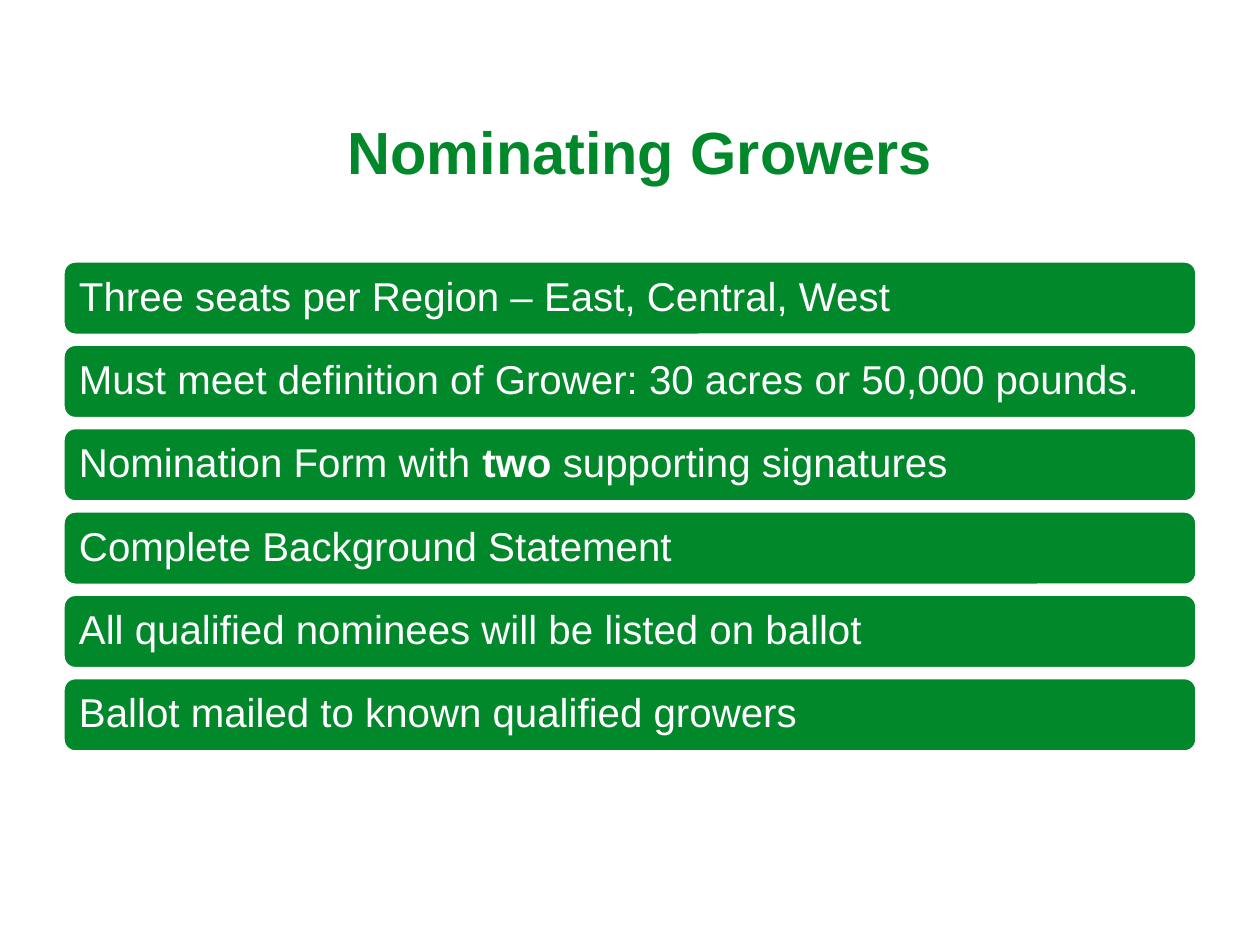
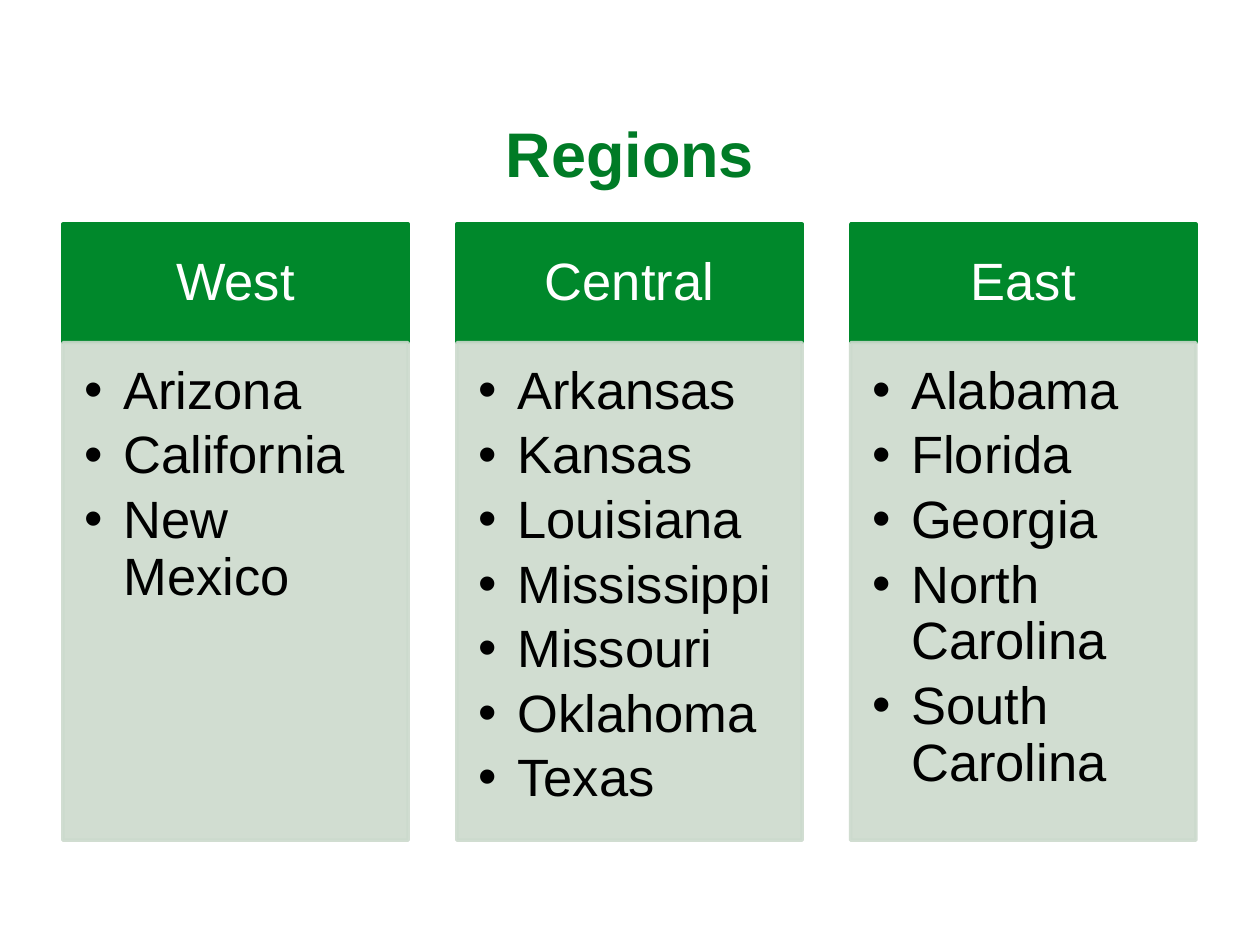
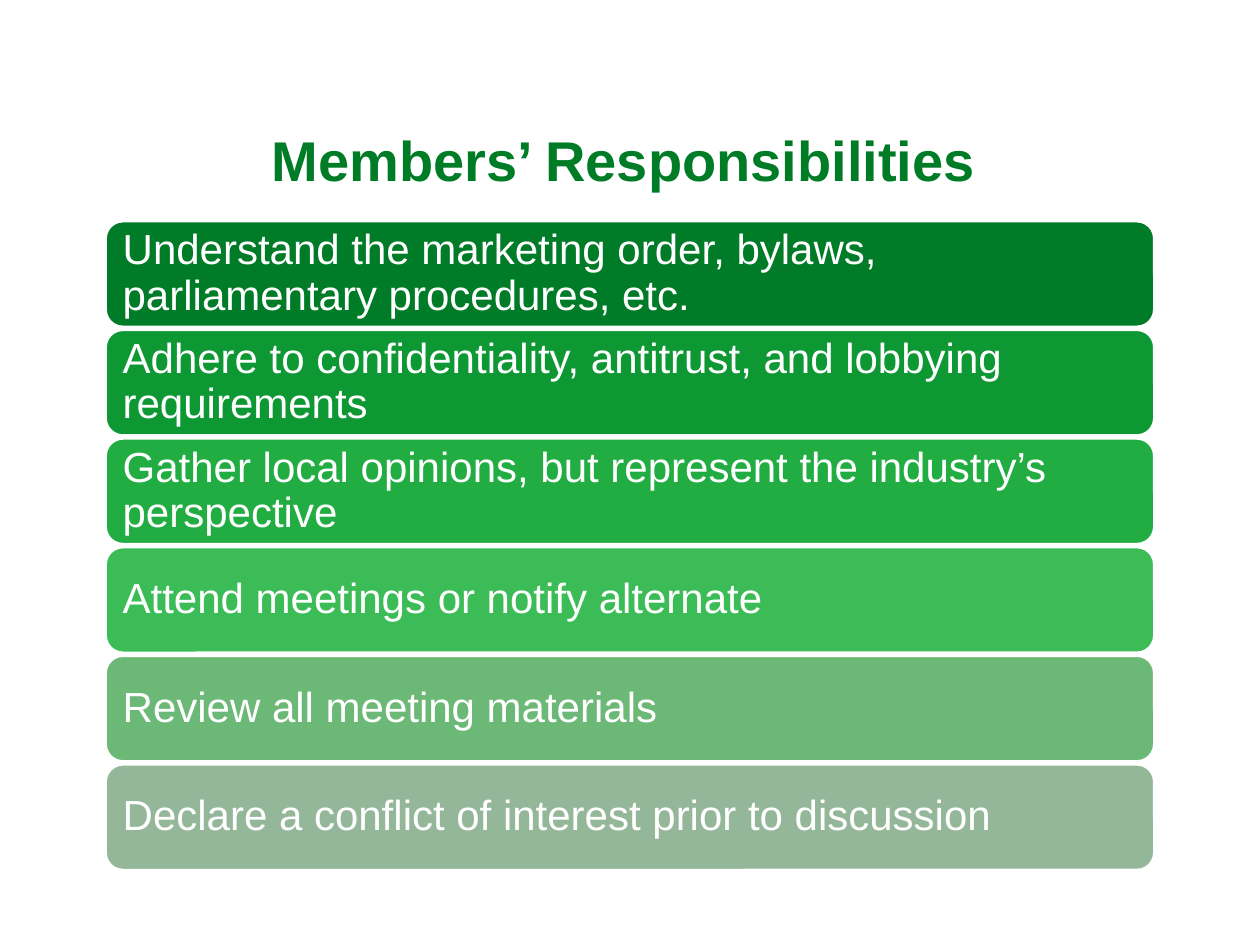
"""Build three slides on nominating growers, regions and members' duties."""
import dataclasses

import pptx
import pptx.dml.color
import pptx.enum.shapes
import pptx.enum.text
import pptx.oxml.ns
import pptx.util
from lxml import etree

Cm = pptx.util.Cm
Pt = pptx.util.Pt
ALIGN = pptx.enum.text.PP_ALIGN
ANCHOR = pptx.enum.text.MSO_ANCHOR
SHAPE = pptx.enum.shapes.MSO_SHAPE


@dataclasses.dataclass(frozen=True)
class Theme:
    font: str = "Arial"
    green: str = "00882B"
    dark_green: str = "007B26"
    pale_green: str = "CCDACD"
    white: str = "FFFFFF"
    black: str = "000000"
    fade: tuple = ("007B27", "0D9834", "22AD43", "3CBC56", "6BB877", "95B799")
    nomination_title: int = 34
    region_title: int = 36
    duty_title: int = 32
    nomination: int = 23
    region: int = 30
    duty: int = 24
    outline: int = 2
    opacity: int = 90
    line_spacing: float = 0.9
    state_gap: float = 4.5


class Deck:
    def __init__(self, theme):
        self.theme = theme
        self.presentation = pptx.Presentation()
        self.presentation.slide_width = Cm(25.4)
        self.presentation.slide_height = Cm(19.05)
        self.slide = None

    def new_slide(self):
        blank = self.presentation.slide_layouts[6]
        self.slide = self.presentation.slides.add_slide(blank)

    def rgb(self, color):
        return pptx.dml.color.RGBColor.from_string(color)

    def style(self, font, size, color, bold=False):
        font.name = self.theme.font
        font.size = Pt(size)
        font.bold = bold
        font.color.rgb = self.rgb(color)

    def frame(self, shape, insets, anchor):
        frame = shape.text_frame
        frame.word_wrap = True
        frame.vertical_anchor = anchor
        (frame.margin_left, frame.margin_top,
         frame.margin_right, frame.margin_bottom) = map(Cm, insets)
        return frame

    def title(self, text, box, size, color):
        heading = self.slide.shapes.add_textbox(*map(Cm, box))
        frame = self.frame(heading, (0.18, 0.2, 0.18, 0.1), ANCHOR.TOP)
        frame.text = text
        paragraph = frame.paragraphs[0]
        paragraph.alignment = ALIGN.CENTER
        self.style(paragraph.runs[0].font, size, color, bold=True)

    def panel(self, kind, box, fill, line):
        panel = self.slide.shapes.add_shape(kind, *map(Cm, box))
        panel.shadow.inherit = False
        panel.fill.solid()
        panel.fill.fore_color.rgb = self.rgb(fill)
        panel.line.color.rgb = self.rgb(line)
        panel.line.width = Pt(self.theme.outline)
        return panel

    def bar(self, text, box, fill, size):
        """Draw a rounded bar; words between asterisks are bold."""
        bar = self.panel(SHAPE.ROUNDED_RECTANGLE, box, fill, self.theme.white)
        frame = self.frame(bar, (0.25,) * 4, ANCHOR.MIDDLE)
        paragraph = frame.paragraphs[0]
        paragraph.alignment = ALIGN.LEFT
        paragraph.line_spacing = self.theme.line_spacing
        for position, piece in enumerate(text.split("*")):
            run = paragraph.add_run()
            run.text = piece
            self.style(run.font, size, self.theme.white, bold=position % 2 == 1)

    def bars(self, texts, box, pitch, fills, size):
        left, top, width, height = box
        for row, (text, fill) in enumerate(zip(texts, fills)):
            self.bar(text, (left, top + row * pitch, width, height), fill, size)

    def column_header(self, text, box):
        header = self.panel(SHAPE.RECTANGLE, box, self.theme.green, self.theme.green)
        frame = self.frame(header, (0.58, 0.33, 0.58, 0.33), ANCHOR.MIDDLE)
        frame.text = text
        paragraph = frame.paragraphs[0]
        paragraph.alignment = ALIGN.CENTER
        paragraph.line_spacing = self.theme.line_spacing
        self.style(paragraph.runs[0].font, self.theme.region, self.theme.white)

    def column_list(self, items, box):
        body = self.panel(SHAPE.RECTANGLE, box, self.theme.pale_green, self.theme.pale_green)
        qn = pptx.oxml.ns.qn
        for color in body.element.spPr.iter(qn("a:srgbClr")):
            etree.SubElement(color, qn("a:alpha"), val=str(self.theme.opacity * 1000))
        frame = self.frame(body, (0.43, 0.43, 0.58, 0.66), ANCHOR.TOP)
        frame.text = "\n".join(items)
        for paragraph in frame.paragraphs:
            properties = paragraph._p.get_or_add_pPr()
            properties.set("marL", str(Cm(0.79)))
            properties.set("indent", str(-Cm(0.79)))
            etree.SubElement(properties, qn("a:buFont"), typeface=self.theme.font)
            etree.SubElement(properties, qn("a:buChar"), char="•")
            paragraph.alignment = ALIGN.LEFT
            paragraph.line_spacing = self.theme.line_spacing
            paragraph.space_after = Pt(self.theme.state_gap)
            self.style(paragraph.runs[0].font, self.theme.region, self.theme.black)


def nominating_growers(deck):
    theme = deck.theme
    steps = [
        "Three seats per Region – East, Central, West",
        "Must meet definition of Grower: 30 acres or 50,000 pounds.",
        "Nomination Form with *two* supporting signatures",
        "Complete Background Statement",
        "All qualified nominees will be listed on ballot",
        "Ballot mailed to known qualified growers",
    ]
    deck.new_slide()
    deck.title("Nominating Growers", (1.47, 2.11, 22.86, 1.98),
               theme.nomination_title, theme.green)
    deck.bars(steps, (1.27, 5.26, 22.86, 1.5), 1.68,
              [theme.green] * len(steps), theme.nomination)


def regions(deck):
    theme = deck.theme
    states_by_region = {
        "West": ["Arizona", "California", "New Mexico"],
        "Central": ["Arkansas", "Kansas", "Louisiana", "Mississippi",
                    "Missouri", "Oklahoma", "Texas"],
        "East": ["Alabama", "Florida", "Georgia", "North Carolina", "South Carolina"],
    }
    deck.new_slide()
    deck.title("Regions", (1.27, 2.11, 22.86, 1.83), theme.region_title, theme.dark_green)
    for column, (region, states) in enumerate(states_by_region.items()):
        left = 1.27 + column * 7.94
        deck.column_header(region, (left, 4.52, 6.96, 2.39))
        deck.column_list(states, (left, 6.91, 6.96, 10.03))


def members_responsibilities(deck):
    theme = deck.theme
    duties = [
        "Understand the marketing order, bylaws, parliamentary procedures, etc.",
        "Adhere to confidentiality, antitrust, and lobbying requirements",
        "Gather local opinions, but represent the industry’s perspective",
        "Attend meetings or notify alternate",
        "Review all meeting materials",
        "Declare a conflict of interest prior to discussion",
    ]
    deck.new_slide()
    deck.title("Members’ Responsibilities ", (1.3, 2.34, 22.86, 1.6),
               theme.duty_title, theme.dark_green)
    deck.bars(duties, (2.12, 4.45, 21.16, 2.15), 2.19, theme.fade, theme.duty)


def main():
    deck = Deck(Theme())
    nominating_growers(deck)
    regions(deck)
    members_responsibilities(deck)
    deck.presentation.save("out.pptx")


if __name__ == "__main__":
    main()
